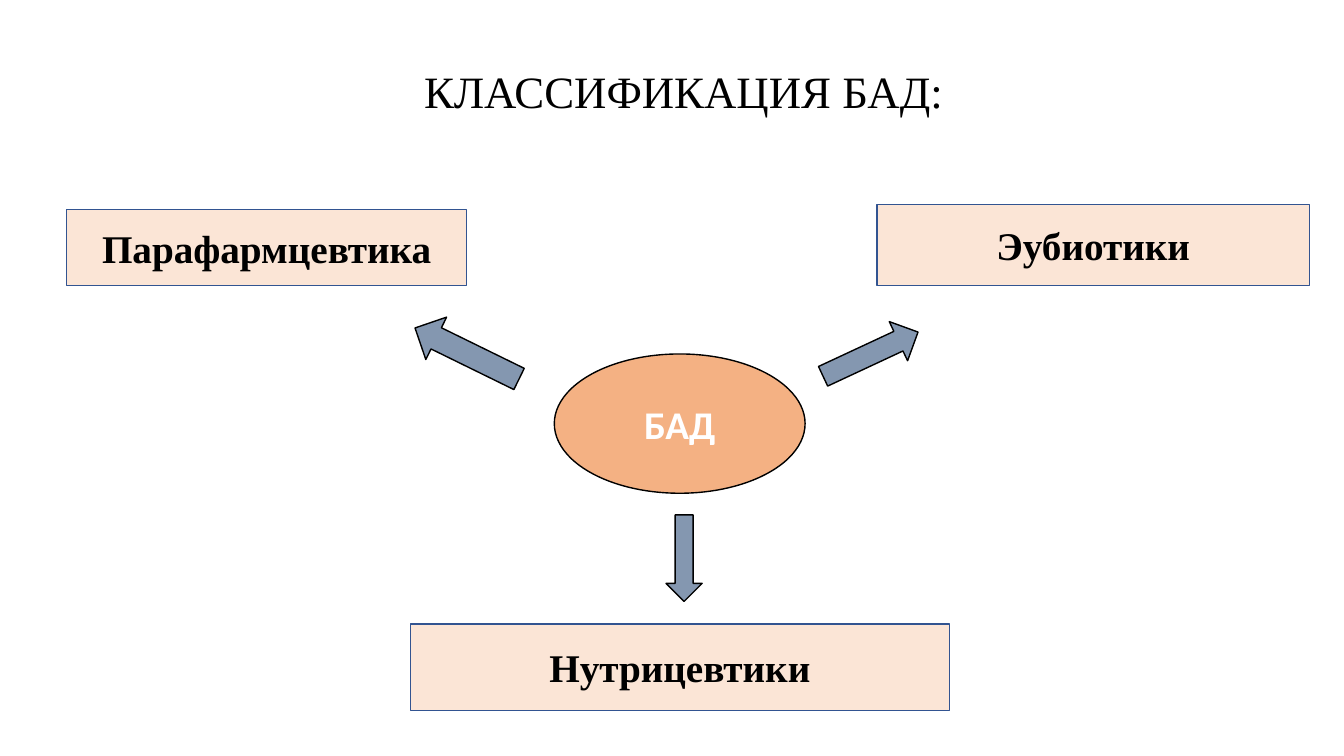
from pptx import Presentation
from pptx import util as u
from pptx.dml.color import RGBColor
from pptx.enum import shapes, text

# Content: positions are left, top, width, height in centimetres
TITLE = ("КЛАССИФИКАЦИЯ БАД:", (5.51, 1.47, 23.44, 1.63))
CENTRE = ("БАД", (13.97, 8.92, 6.32, 3.51))
GROUPS = [
    ("Парафармцевтика", (1.68, 5.28, 10.08, 1.91)),
    ("Нутрицевтики", (10.34, 15.72, 13.59, 2.18)),
    ("Эубиотики", (22.1, 5.16, 10.9, 2.03)),
]
ARROWS = [
    (206.1, (10.31, 8.31, 2.92, 1.19)),
    (335, (20.62, 8.38, 2.64, 1.09)),
    (90, (16.15, 13.61, 2.18, 0.91)),
]

# Formats
TITLE_FONT = {"name": "Times New Roman", "size": u.Pt(32), "bold": False}
GROUP_FONT = {"name": "Times New Roman", "size": u.Pt(28), "bold": True}
CENTRE_FONT = {"name": "Calibri", "size": u.Pt(28), "bold": True}
SHAPE = shapes.MSO_SHAPE
ANCHOR = text.MSO_ANCHOR


def color(target, value):
    target.rgb = RGBColor.from_string(value)


def paint(shape, fill, line):
    shape.fill.solid()
    color(shape.fill.fore_color, fill)
    color(shape.line.color, line)
    shape.line.width = u.Pt(1)


def write(shape, words, font, font_color, anchor=ANCHOR.MIDDLE):
    frame = shape.text_frame
    frame.word_wrap = True
    frame.vertical_anchor = anchor
    paragraph = frame.paragraphs[0]
    paragraph.alignment = text.PP_ALIGN.CENTER
    run = paragraph.add_run()
    run.text = words
    for name, value in font.items():
        setattr(run.font, name, value)
    color(run.font.color, font_color)


def add(slide, kind, box, fill, line):
    shape = slide.shapes.add_shape(kind, *map(u.Cm, box))
    shape.shadow.inherit = False
    paint(shape, fill, line)
    return shape


def main():
    presentation = Presentation()
    presentation.slide_width = u.Cm(33.87)
    presentation.slide_height = u.Cm(19.05)
    slide = presentation.slides.add_slide(presentation.slide_layouts[5])

    # Title
    words, box = TITLE
    title = slide.shapes.title
    title.left, title.top, title.width, title.height = map(u.Cm, box)
    paint(title, "FFFFFF", "FFFFFF")
    write(title, words, TITLE_FONT, "000000", ANCHOR.TOP)

    # Central ellipse
    words, box = CENTRE
    centre = add(slide, SHAPE.OVAL, box, "F4B183", "000000")
    write(centre, words, CENTRE_FONT, "FFFFFF")

    # Groups
    for words, box in GROUPS:
        group = add(slide, SHAPE.RECTANGLE, box, "FBE5D6", "325491")
        write(group, words, GROUP_FONT, "000000")

    # Arrows from the centre to the groups
    for angle, box in ARROWS:
        arrow = add(slide, SHAPE.RIGHT_ARROW, box, "8497B0", "000000")
        arrow.rotation = angle

    presentation.save("out.pptx")


if __name__ == "__main__":
    main()
